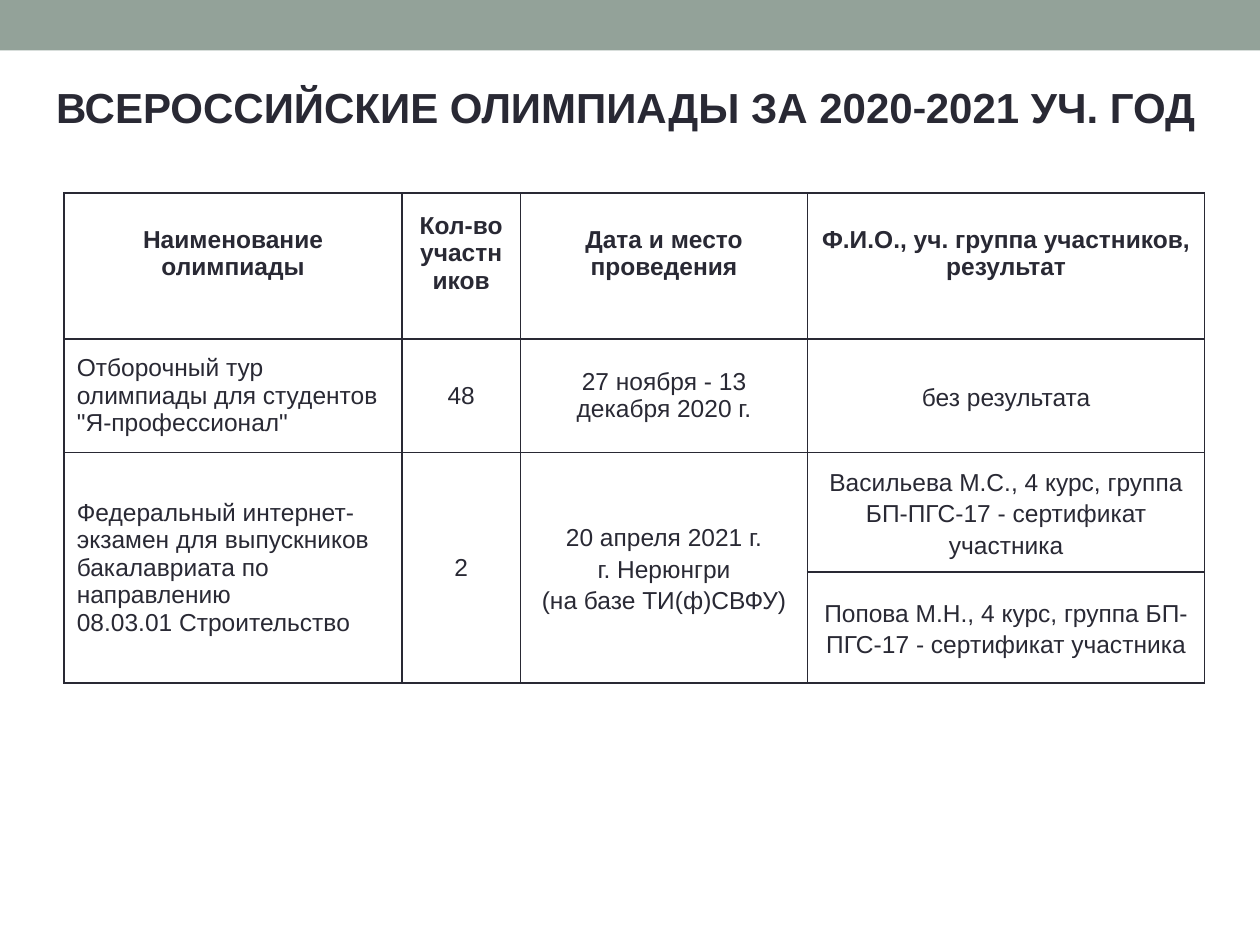
from dataclasses import dataclass

from lxml.etree import SubElement
from pptx import Presentation
from pptx.dml.color import RGBColor
from pptx.enum.shapes import MSO_SHAPE
from pptx.enum.text import MSO_ANCHOR, PP_ALIGN
from pptx.oxml.ns import qn
from pptx.util import Pt

COLORS = {"band": "93A299", "ink": "292934"}
COLUMN_WIDTHS = [193, 67.7, 164.2, 226.8]
ROW_HEIGHTS = [83.5, 64.8, 68.4, 63.4]
BORDER_WIDTH = 1


@dataclass
class Entry:
    """Text of one table cell; a newline starts a paragraph, \\v breaks a line."""
    row: int
    column: int
    text: str
    align: PP_ALIGN = PP_ALIGN.CENTER
    row_span: int = 1
    bold: bool = False
    loose: bool = False


HEADINGS = [
    "Наименование олимпиады",
    "Кол-во участников",
    "Дата и место проведения",
    "Ф.И.О., уч. группа участников, результат",
]
ENTRIES = [Entry(0, column, text, bold=True) for column, text in enumerate(HEADINGS)] + [
    Entry(1, 0, 'Отборочный тур олимпиады для студентов "Я-профессионал"', PP_ALIGN.LEFT),
    Entry(1, 1, "48"),
    Entry(1, 2, "27 ноября - 13 декабря 2020 г."),
    Entry(1, 3, "без результата", loose=True),
    Entry(2, 0, "Федеральный интернет-экзамен для выпускников бакалавриата по направлению\n"
                "08.03.01 Строительство", PP_ALIGN.LEFT, row_span=2),
    Entry(2, 1, "2", row_span=2),
    Entry(2, 2, "20 апреля 2021 г.\nг. Нерюнгри\v(на базе ТИ(ф)СВФУ)", row_span=2, loose=True),
    Entry(2, 3, "Васильева М.С., 4 курс, группа БП-ПГС-17 - сертификат участника", loose=True),
    Entry(3, 3, "Попова М.Н., 4 курс, группа БП-ПГС-17 - сертификат участника", loose=True),
]


def color(name: str) -> RGBColor:
    return RGBColor.from_string(COLORS[name])


def format_font(font, *, size: float, bold: bool = False, name: str = "Arial") -> None:
    font.name, font.size, font.bold = name, Pt(size), bold
    font.color.rgb = color("ink")


def write_text(frame, text: str, *, size: float, align: PP_ALIGN,
               bold: bool = False, line_spacing: float = 1.0) -> None:
    frame.word_wrap = True
    frame.text = text
    for paragraph in frame.paragraphs:
        paragraph.alignment = align
        paragraph.line_spacing = line_spacing
        for span in paragraph.runs:
            format_font(span.font, size=size, bold=bold)


def add_borders(cell) -> None:
    """Draw all four cell edges; they must come before the fill in the XML."""
    properties = cell._tc.get_or_add_tcPr()
    for edge in ("a:lnL", "a:lnR", "a:lnT", "a:lnB"):
        line = SubElement(properties, qn(edge), w=str(Pt(BORDER_WIDTH)))
        fill = SubElement(line, qn("a:solidFill"))
        SubElement(fill, qn("a:srgbClr"), val=COLORS["ink"])


def add_band(page, width: int) -> None:
    band = page.shapes.add_shape(MSO_SHAPE.RECTANGLE, 0, 0, width, Pt(28.8))
    band.shadow.inherit = False
    band.fill.solid()
    band.fill.fore_color.rgb = color("band")
    band.line.fill.background()


def add_title(page) -> None:
    box = page.shapes.add_textbox(Pt(17.3), Pt(43.2), Pt(680.4), Pt(36))
    box.text_frame.word_wrap = True
    paragraph = box.text_frame.paragraphs[0]
    paragraph.alignment = PP_ALIGN.CENTER
    for text, name in (("ВСЕРОССИЙСКИЕ ОЛИМПИАДЫ ЗА 2020", "Arial"),
                       ("-", "Calibri"), ("2021 УЧ. ГОД", "Arial")):
        span = paragraph.add_run()
        span.text = text
        format_font(span.font, size=24, bold=True, name=name)


def fill_cell(table, entry: Entry) -> None:
    cell = table.cell(entry.row, entry.column)
    if entry.row_span > 1:
        cell.merge(table.cell(entry.row + entry.row_span - 1, entry.column))
    cell.vertical_anchor = MSO_ANCHOR.MIDDLE
    if entry.loose:
        cell.margin_left = cell.margin_right = Pt(5)
        cell.margin_top = cell.margin_bottom = 0
    if entry.row == 0:
        cell.margin_bottom = Pt(18)
    write_text(cell.text_frame, entry.text, size=14, align=entry.align, bold=entry.bold,
               line_spacing=1.15 if entry.loose else 1.0)


def add_olympiad_table(page) -> None:
    table = page.shapes.add_table(
        len(ROW_HEIGHTS), len(COLUMN_WIDTHS), Pt(36.7), Pt(110.2),
        Pt(sum(COLUMN_WIDTHS)), Pt(sum(ROW_HEIGHTS))).table
    table.first_row = table.horz_banding = False
    for column, width in zip(table.columns, COLUMN_WIDTHS):
        column.width = Pt(width)
    for row, height in zip(table.rows, ROW_HEIGHTS):
        row.height = Pt(height)
    for cell in table.iter_cells():
        add_borders(cell)
        cell.fill.background()
    for entry in ENTRIES:
        fill_cell(table, entry)


def main() -> None:
    deck = Presentation()
    deck.slide_width, deck.slide_height = Pt(720), Pt(540)
    page = deck.slides.add_slide(deck.slide_layouts[6])
    add_band(page, deck.slide_width)
    add_title(page)
    add_olympiad_table(page)
    deck.save("out.pptx")


if __name__ == "__main__":
    main()
